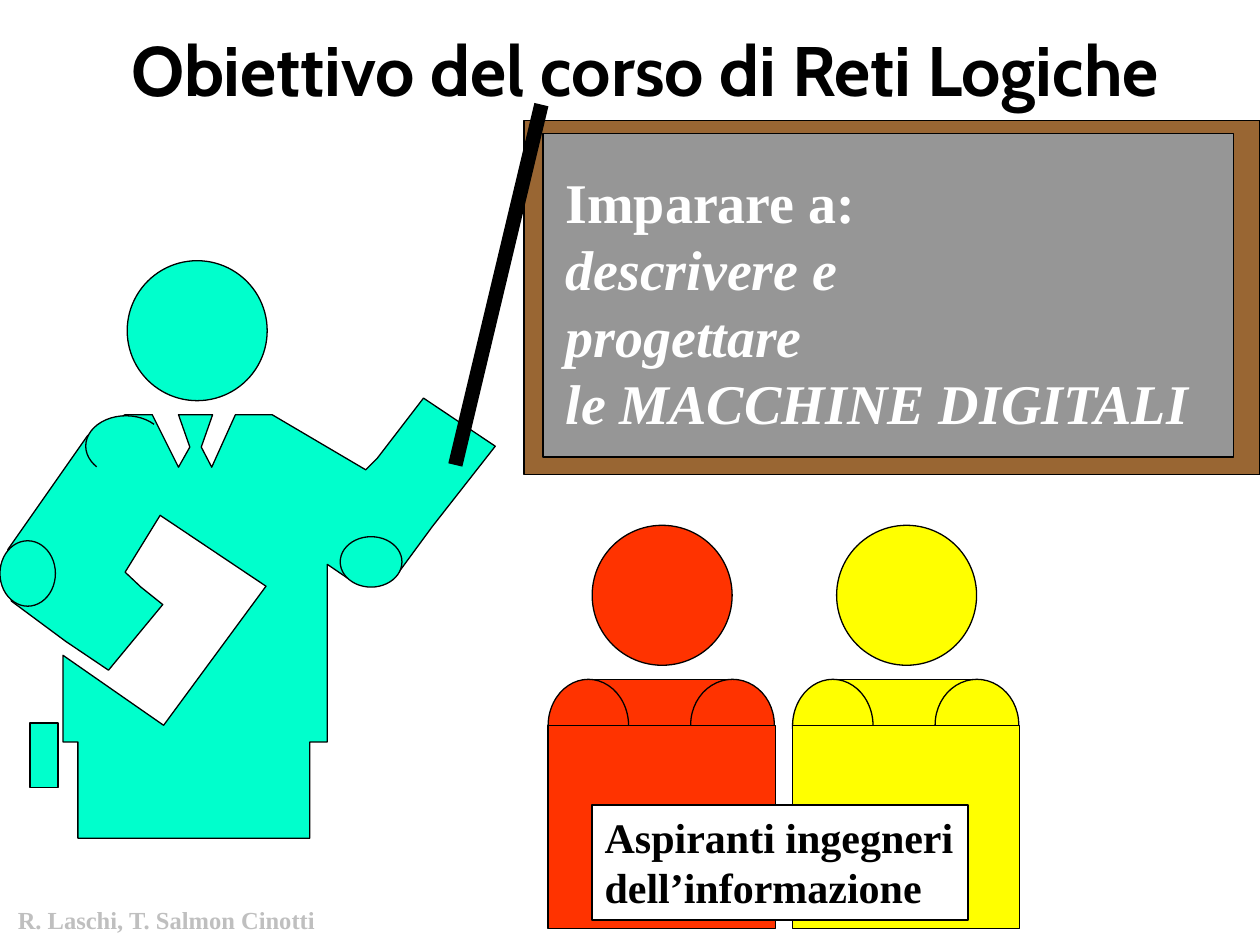
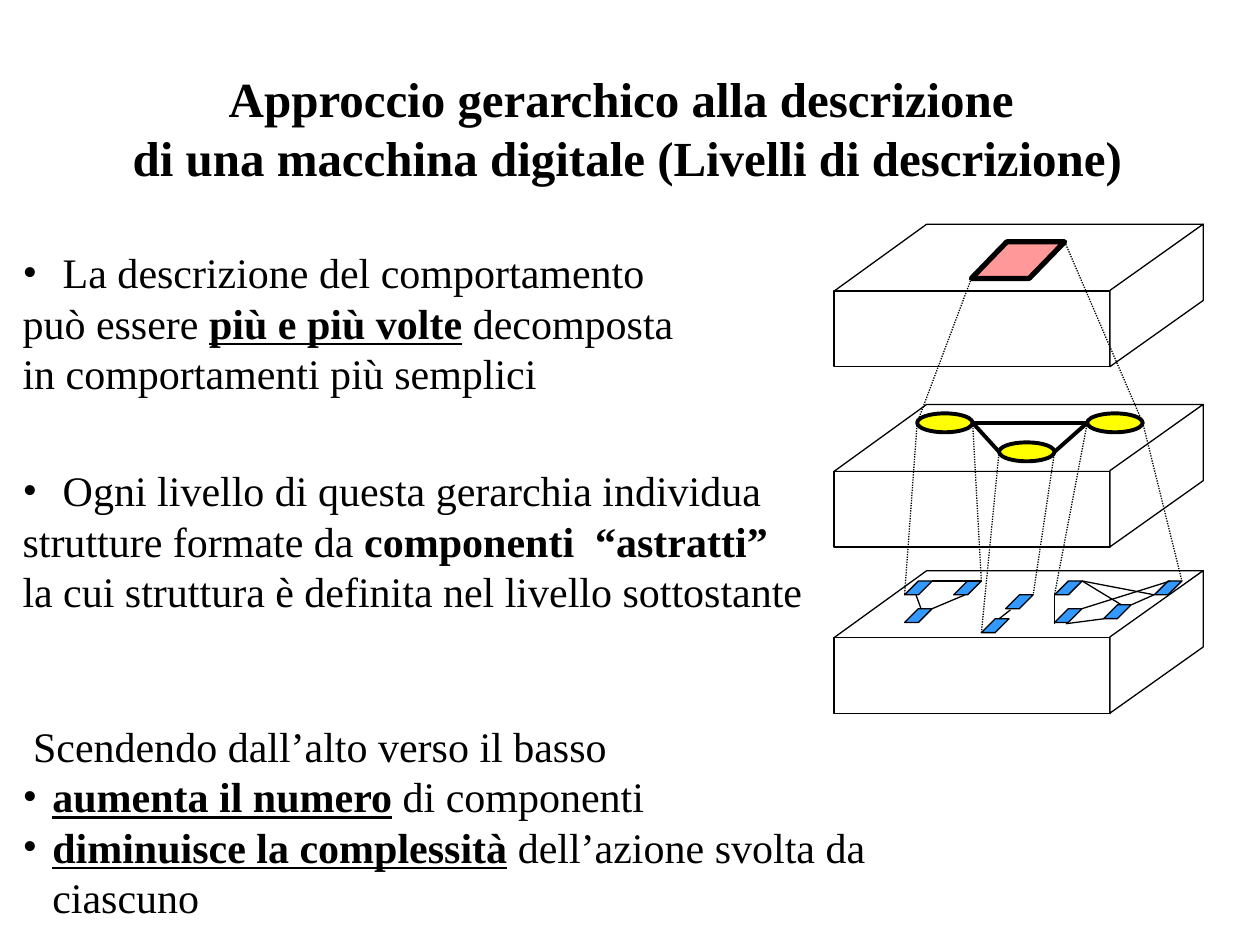
from dataclasses import dataclass

from lxml import etree
from pptx import Presentation
from pptx.dml.color import RGBColor
from pptx.enum.dml import MSO_LINE
from pptx.enum.shapes import MSO_CONNECTOR, MSO_SHAPE
from pptx.enum.text import MSO_ANCHOR, PP_ALIGN
from pptx.oxml.ns import qn
from pptx.util import Pt


@dataclass(frozen=True)
class Theme:
    # Colours
    ink: str = "000000"
    paper: str = "FFFFFF"
    frame: str = "996633"
    slate: str = "969696"
    teacher: str = "00FFCC"
    students: tuple = ("FF3300", "FFFF00")
    credit: str = "BFBFBF"
    machine: str = "FF9999"
    node: str = "FFFF00"
    chip: str = "3399FF"
    # Fonts and type sizes
    serif: str = "Times New Roman"
    sans: str = "Cabin"
    headline: float = 40
    board: float = 32
    title: float = 28
    body: float = 24
    small: float = 14
    # Line widths
    thin: float = 0.75
    medium: float = 1
    bold: float = 2.25
    heavy: float = 3
    pointer: float = 8.25


THEME = Theme()


def rgb(code):
    return RGBColor.from_string(code)


def paint(shape, fill, width=THEME.thin):
    shape.shadow.inherit = False
    shape.fill.solid()
    shape.fill.fore_color.rgb = rgb(fill)
    shape.line.color.rgb = rgb(THEME.ink)
    shape.line.width = Pt(width)
    return shape


def place(slide, preset, origin, box, fill, width=THEME.thin, slant=None):
    """Preset shape whose box is relative to the origin of its region."""
    left, top, wide, high = box
    shape = slide.shapes.add_shape(
        preset, Pt(origin[0] + left), Pt(origin[1] + top), Pt(wide), Pt(high))
    if slant is not None:
        shape.adjustments[0] = slant
    return paint(shape, fill, width)


def link(slide, start, end, width=THEME.thin, dotted=False):
    line = slide.shapes.add_connector(
        MSO_CONNECTOR.STRAIGHT, *(Pt(v) for v in (*start, *end)))
    line.line.color.rgb = rgb(THEME.ink)
    line.line.width = Pt(width)
    if dotted:
        line.line.dash_style = MSO_LINE.ROUND_DOT
    etree.SubElement(line._element.spPr, qn("a:effectLst"))
    return line


def shift(origin, point):
    return origin[0] + point[0], origin[1] + point[1]


def add_bullet(paragraph):
    props = paragraph._p.get_or_add_pPr()
    props.set("marL", str(Pt(17)))
    props.set("indent", str(-Pt(17)))
    etree.SubElement(props, qn("a:buFont")).set("typeface", THEME.serif)
    etree.SubElement(props, qn("a:buChar")).set("char", "•")


def write(slide, box, paragraphs, size, color=THEME.ink, font=THEME.serif,
          align=PP_ALIGN.LEFT, anchor=MSO_ANCHOR.TOP, wrap=True):
    """Each paragraph is (bullet, [(text, style)]); style uses b, i and u."""
    words = slide.shapes.add_textbox(*(Pt(v) for v in box))
    frame = words.text_frame
    frame.word_wrap = wrap
    frame.vertical_anchor = anchor
    frame.text = "\n".join("" for _ in paragraphs)
    for paragraph, (bullet, pieces) in zip(frame.paragraphs, paragraphs):
        paragraph.alignment = align
        if bullet:
            add_bullet(paragraph)
        for index, (text, _) in enumerate(pieces):
            if index == 0:
                paragraph.text = text
            else:
                paragraph.add_run().text = text
        styles = [style for text, style in pieces for _ in text.split("\v")]
        for run, style in zip(paragraph.runs, styles):
            run.font.name = font
            run.font.size = Pt(size)
            run.font.color.rgb = rgb(color)
            run.font.bold = "b" in style
            run.font.italic = "i" in style
            run.font.underline = "u" in style
    return words


def write_title(slide, box, text, size, font):
    write(slide, box, [(False, [(text, "b")])], size, font=font,
          align=PP_ALIGN.CENTER, anchor=MSO_ANCHOR.MIDDLE)


# Slide 1: the course goal

def draw_blackboard(slide, origin):
    place(slide, MSO_SHAPE.RECTANGLE, origin, (0, 0, 420.5, 202.3), THEME.frame)
    place(slide, MSO_SHAPE.RECTANGLE, origin, (10.8, 7.2, 394.5, 185), THEME.slate)
    lines = [("Imparare a:", "b"), ("descrivere e", "bi"),
             ("progettare", "bi"), ("le MACCHINE DIGITALI", "bi")]
    write(slide, (*shift(origin, (16.6, 23)), 372.2, 160.6),
          [(False, [line]) for line in lines], THEME.board, THEME.paper)


def draw_student(slide, origin, color):
    parts = [
        (MSO_SHAPE.RECTANGLE, (21, 88, 86.4, 41)),      # upper torso
        (MSO_SHAPE.OVAL, (0, 88, 46, 53.3)),            # left shoulder
        (MSO_SHAPE.OVAL, (81.5, 88, 47.8, 52)),         # right shoulder
        (MSO_SHAPE.OVAL, (25.2, 0, 80, 80)),            # head
        (MSO_SHAPE.RECTANGLE, (0, 114.5, 129.8, 116)),  # body
    ]
    for preset, box in parts:
        place(slide, preset, origin, box, color)


def draw_students(slide, origin):
    for index, color in enumerate(THEME.students):
        draw_student(slide, shift(origin, (index * 139.7, 0)), color)
    label = write(slide, (*shift(origin, (25.2, 160)), 214.6, 65.5),
                  [(False, [("Aspiranti ingegneri", "b")]),
                   (False, [("dell’informazione", "b")])],
                  THEME.body, wrap=False)
    paint(label, THEME.paper, THEME.medium)


TEACHER_BODY = [
    # left arm and hand
    (87, 88), (71.5, 88), (50, 100), (4.5, 165), (6.5, 194.5), (37.5, 217.5),
    (62, 234), (93, 196.5), (80.5, 186.5), (71.5, 178),
    # sheet of paper
    (91.5, 145.5), (152, 186), (93.5, 265.5), (36, 225.5),
    # jacket and legs
    (36, 275), (44.5, 275), (44.5, 330), (177, 330), (177, 275), (187, 275),
    (187, 173.5),
    # raised right arm
    (199.5, 182), (224.5, 182), (227.5, 178.5), (247, 152), (283, 106),
    (242, 78.5), (215.5, 113), (209, 119.5), (155.5, 88),
    # collar and tie
    (134.5, 88), (121, 118), (115, 106.5), (121.5, 88), (102, 88),
    (108.5, 106.5), (102, 118),
]


def draw_teacher(slide, origin):
    color = THEME.teacher
    place(slide, MSO_SHAPE.OVAL, origin, (72.7, 0, 80, 80), color)  # head
    outline = [tuple(Pt(v) for v in shift(origin, point)) for point in TEACHER_BODY]
    builder = slide.shapes.build_freeform(*outline[0])
    builder.add_line_segments(outline[1:], close=True)
    paint(builder.convert_to_shape(), color)
    # Shoulder: angles in degrees, an adjustment unit is 100000/60000 degrees
    shoulder = place(slide, MSO_SHAPE.ARC, origin, (49, 88.6, 46, 34.6), color)
    for index, degrees in enumerate((144.7, 322.3)):
        shoulder.adjustments[index] = degrees * 0.6
    # Elbows
    for elbow in ((0, 160, 31.7, 37.4), (194.4, 157.7, 35.3, 28.8)):
        place(slide, MSO_SHAPE.OVAL, origin, elbow, color)
    # Chalk and pointer
    place(slide, MSO_SHAPE.RECTANGLE, origin, (17.3, 264.3, 15.8, 36.7), color,
          THEME.medium)
    link(slide, shift(origin, (260.2, 116.7)), shift(origin, (309.4, -89.2)),
         THEME.pointer)


def build_goal_slide(slide):
    draw_blackboard(slide, (299.5, 69))
    draw_students(slide, (313.2, 300.2))
    draw_teacher(slide, (0, 149))
    write_title(slide, (17.3, 0, 702.7, 77.8),
                "Obiettivo del corso di Reti Logiche", THEME.headline, THEME.sans)
    write(slide, (2.2, 513.4, 185.8, 24.5),
          [(False, [("R. Laschi, T. Salmon Cinotti", "b")])], THEME.small,
          THEME.credit, align=PP_ALIGN.CENTER, wrap=False)


# Slide 2: the levels of description

CHIP = (15.8, 7.9)
NODE = (31.7, 10.8)
MACHINE = (78.5, 10, 53.3, 20.9)
NODES = [(47.5, 5), (94.3, 21.6), (144.7, 5)]
# One cluster of chips under each node, from its left to its right end
CLUSTERS = [
    [(40.3, 5.8), (40.3, 21.6), (68.4, 5.8)],
    [(84.2, 27.4), (98, 13.7)],
    [(126, 5.8), (126, 21.6), (154, 19.4), (183, 5.8)],
]
WIRES = [
    ((46.8, 13.7), (49.7, 21.6)), ((56.2, 21.6), (74.9, 13.7)),
    ((56.2, 5.8), (84.2, 5.8)), ((94.3, 27.4), (100.8, 22.3)),
    ((141.8, 5.8), (164.2, 19.4)), ((141.8, 5.8), (182.9, 13.7)),
    ((132.5, 30.2), (154.1, 27.4)), ((141.8, 21.6), (192.2, 5.8)),
    ((169.9, 19.4), (182.9, 13.7)), ((126, 30.2), (126, 13.7)),
]


def draw_slab(slide, origin):
    slanted = MSO_SHAPE.PARALLELOGRAM
    place(slide, slanted, origin, (0, 0, 211, 38.2), THEME.paper, slant=1.384)
    place(slide, MSO_SHAPE.RECTANGLE, origin, (0, 38.2, 157.7, 43.2), THEME.paper)
    side = place(slide, slanted, origin, (143.6, 14, 81.4, 53.3), THEME.paper,
                 slant=0.71)
    side.rotation = 270
    side._element.spPr.find(qn("a:xfrm")).set("flipV", "1")


def draw_levels(slide, origin):
    top, middle, bottom = (shift(origin, (0, y)) for y in (0, 103, 198))
    # Bottom level: chips and wires
    draw_slab(slide, bottom)
    for cluster in CLUSTERS:
        for chip in cluster:
            place(slide, MSO_SHAPE.PARALLELOGRAM, bottom, (*chip, *CHIP),
                  THEME.chip, slant=1)
    for start, end in WIRES:
        link(slide, shift(bottom, start), shift(bottom, end))
    # Middle level: nodes, each spread over its cluster
    draw_slab(slide, middle)
    ends = []
    for node, cluster in zip(NODES, CLUSTERS):
        place(slide, MSO_SHAPE.OVAL, middle, (*node, *NODE), THEME.node, THEME.bold)
        left = shift(middle, (node[0], node[1] + NODE[1] / 2))
        right = shift(left, (NODE[0], 0))
        ends.append((left, right))
        lower_left = shift(cluster[0], (0, CHIP[1]))
        upper_right = shift(cluster[-1], (CHIP[0], 0))
        link(slide, left, shift(bottom, lower_left), dotted=True)
        link(slide, right, shift(bottom, upper_right), dotted=True)
    for first, second in ((0, 1), (1, 2), (0, 2)):
        link(slide, ends[first][1], ends[second][0], THEME.bold)
    # Top level: the whole machine
    draw_slab(slide, top)
    place(slide, MSO_SHAPE.PARALLELOGRAM, top, MACHINE, THEME.machine,
          THEME.heavy, slant=0.97)
    left, upper, wide, high = MACHINE
    link(slide, shift(top, (left, upper + high)), ends[0][0], dotted=True)
    link(slide, shift(top, (left + wide, upper)), ends[-1][1], dotted=True)


def write_points(slide, origin):
    points = [
        (0, 408.2, [
            (True, [(" La descrizione del comportamento", "")]),
            (False, [("può essere ", ""), ("più e più volte", "bu"),
                     (" decomposta", "")]),
            (False, [("in comportamenti più semplici", "")])]),
        (124.6, 465.8, [
            (True, [(" Ogni livello di questa gerarchia individua", "")]),
            (False, [("strutture formate da ", ""),
                     ("componenti  “astratti”", "b")]),
            (False, [("la cui struttura è definita nel livello sottostante", "")])]),
        (270.7, 576.7, [
            (False, [(" Scendendo dall’alto verso il basso", "")]),
            (True, [("aumenta il numero", "bu"), (" di componenti", "")]),
            (True, [("diminuisce la complessità", "bu"),
                    (" dell’azione svolta da ciascuno", "")])]),
    ]
    for offset, wide, paragraphs in points:
        write(slide, (*shift(origin, (0, offset)), wide, 93.6), paragraphs, THEME.body)


def build_levels_slide(slide):
    write_title(slide, (36, 33.8, 645, 77.8),
                "Approccio gerarchico alla descrizione \v"
                "di una macchina digitale (Livelli di descrizione)",
                THEME.title, THEME.serif)
    write_points(slide, (5.8, 137.5))
    draw_levels(slide, (476.6, 128.2))


def main():
    deck = Presentation()
    deck.slide_width, deck.slide_height = Pt(720), Pt(540)
    for build in (build_goal_slide, build_levels_slide):
        build(deck.slides.add_slide(deck.slide_layouts[6]))
    deck.save("out.pptx")


if __name__ == "__main__":
    main()
